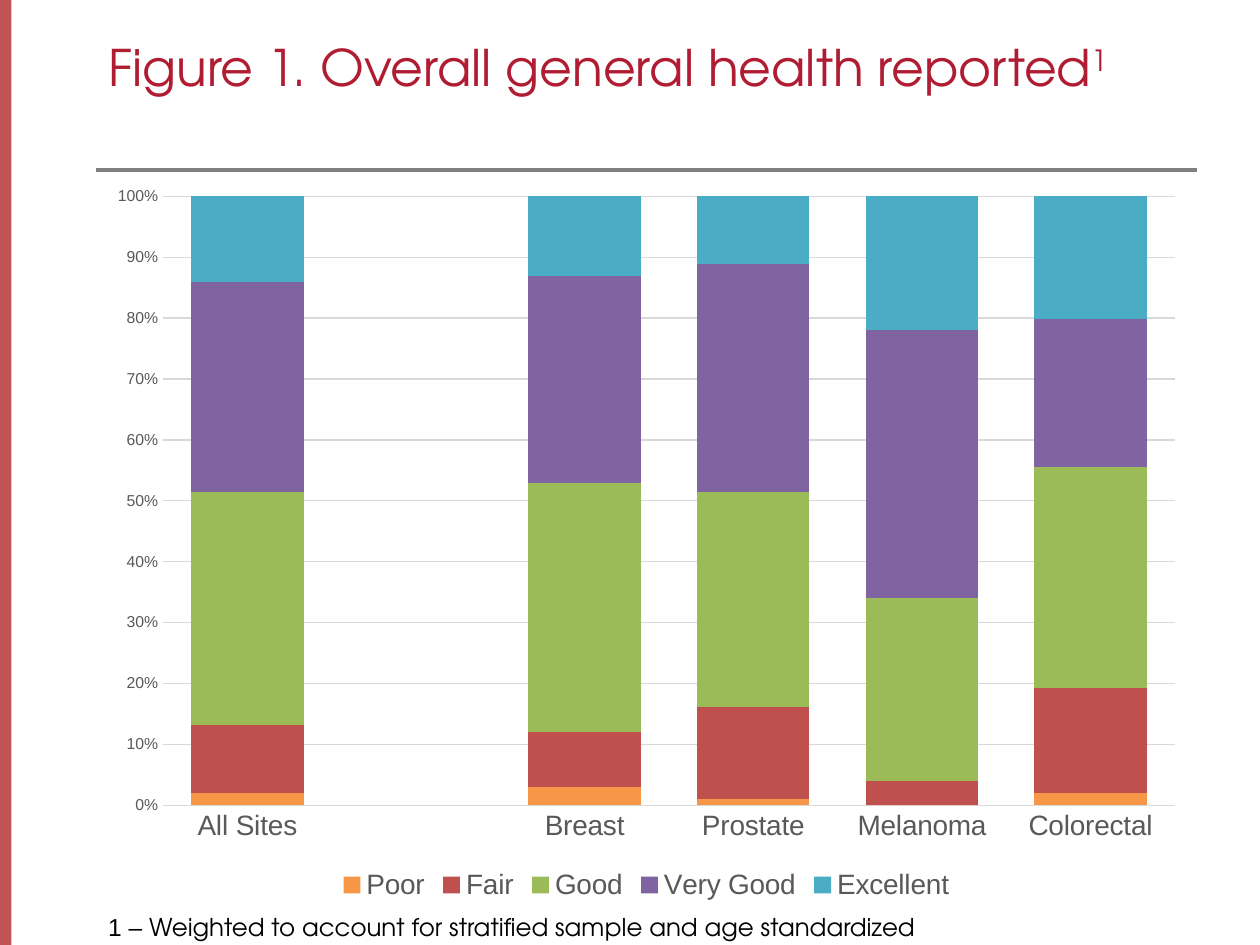
from lxml import etree
from pptx import Presentation
from pptx.chart.data import CategoryChartData
from pptx.dml.color import RGBColor
from pptx.enum.chart import XL_CHART_TYPE as ChartType
from pptx.enum.chart import XL_LEGEND_POSITION as LegendPosition
from pptx.enum.chart import XL_TICK_MARK as TickMark
from pptx.enum.shapes import MSO_CONNECTOR as Connector
from pptx.enum.shapes import MSO_SHAPE as Shape
from pptx.enum.text import MSO_ANCHOR as Anchor
from pptx.oxml.ns import qn
from pptx.util import Pt

LEFT, WIDTH = 54.7, 629.3
HEADING_FONT, BODY_FONT = "TeX Gyre Adventor", "Arial"


def color(hex_string):
    return RGBColor.from_string(hex_string)


def style_font(font, size, hex_string, name):
    font.size = Pt(size)
    font.bold = False
    font.color.rgb = color(hex_string)
    font.name = name


deck = Presentation()
deck.slide_width, deck.slide_height = Pt(720), Pt(540)
page = deck.slides.add_slide(deck.slide_layouts[6])

# Translucent red band on the left edge
band = page.shapes.add_shape(Shape.RECTANGLE, 0, 0, Pt(6.5), Pt(540))
band.shadow.inherit = False
band.fill.solid()
band.fill.fore_color.rgb = color("AF282C")
band.line.fill.background()
band_color = band.fill._xPr.find(qn("a:solidFill"))[0]
etree.SubElement(band_color, qn("a:alpha"), val="80000")

# Rule under the title
rule = page.shapes.add_connector(
    Connector.STRAIGHT, Pt(LEFT), Pt(97.2), Pt(LEFT + WIDTH), Pt(97.2))
rule.line.color.rgb = color("808080")
rule.line.width = Pt(2.5)
etree.SubElement(rule._element.spPr, qn("a:effectLst"))

# Title with a superscript note mark
title = page.shapes.add_textbox(Pt(LEFT), Pt(13.7), Pt(WIDTH), Pt(85))
frame = title.text_frame
frame.word_wrap = True
frame.vertical_anchor = Anchor.TOP
frame.margin_left = frame.margin_right = Pt(7.2)
frame.margin_top = frame.margin_bottom = Pt(7.2)
para = frame.paragraphs[0]
style_font(para.font, 28.8, "B01C32", HEADING_FONT)
para.add_run().text = "Figure 1. Overall general health reported"
note_mark = para.add_run()
note_mark.text = "1"
note_mark._r.get_or_add_rPr().set("baseline", "30000")

# Chart data: the blank category separates the total from the sites
health_ratings = [
    ("Poor", "F79646", [2, None, 3, 1, 0, 2]),
    ("Fair", "C0504D", [11, None, 9, 15, 4, 17]),
    ("Good", "9BBB59", [38, None, 41, 35, 30, 36]),
    ("Very Good", "8064A2", [34, None, 34, 37, 44, 24]),
    ("Excellent", "4BACC6", [14, None, 13, 11, 22, 20]),
]
data = CategoryChartData()
data.categories = ["All Sites", "", "Breast", "Prostate", "Melanoma", "Colorectal"]
for rating, _, values in health_ratings:
    data.add_series(rating, values)

# Stacked chart
chart = page.shapes.add_chart(
    ChartType.COLUMN_STACKED_100, Pt(LEFT), Pt(98.6), Pt(WIDTH), Pt(419), data).chart
style_font(chart.font, 10, "000000", BODY_FONT)
chart.has_title = False
plot = chart.plots[0]
plot.gap_width, plot.overlap = 50, 100
plot.vary_by_categories = False
for series, (_, fill_color, _) in zip(plot.series, health_ratings):
    series.format.fill.solid()
    series.format.fill.fore_color.rgb = color(fill_color)

# Axes, gridlines and legend
sites, share = chart.category_axis, chart.value_axis
for axis, size in ((sites, 16), (share, 9)):
    axis.major_tick_mark = axis.minor_tick_mark = TickMark.NONE
    style_font(axis.tick_labels.font, size, "595959", BODY_FONT)
share.minimum_scale, share.maximum_scale, share.major_unit = 0, 1, 0.1
share.tick_labels.number_format = "0%"
share.tick_labels.number_format_is_linked = False
share.format.line.fill.background()
share.has_major_gridlines = True
for line in (sites.format.line, share.major_gridlines.format.line):
    line.color.rgb = color("D9D9D9")
    line.width = Pt(0.75)
chart.has_legend = True
chart.legend.position = LegendPosition.BOTTOM
chart.legend.include_in_layout = False
style_font(chart.legend.font, 16, "595959", BODY_FONT)

# Footnote
footnote = page.shapes.add_textbox(Pt(LEFT), Pt(517.7), Pt(594.7), Pt(24.2))
footnote.text_frame.word_wrap = True
para = footnote.text_frame.paragraphs[0]
for text, font_name in (
        ("1 – ", BODY_FONT),
        ("Weighted to account for stratified sample and age standardized", HEADING_FONT)):
    span = para.add_run()
    span.text = text
    style_font(span.font, 14, "000000", font_name)

deck.save("out.pptx")
